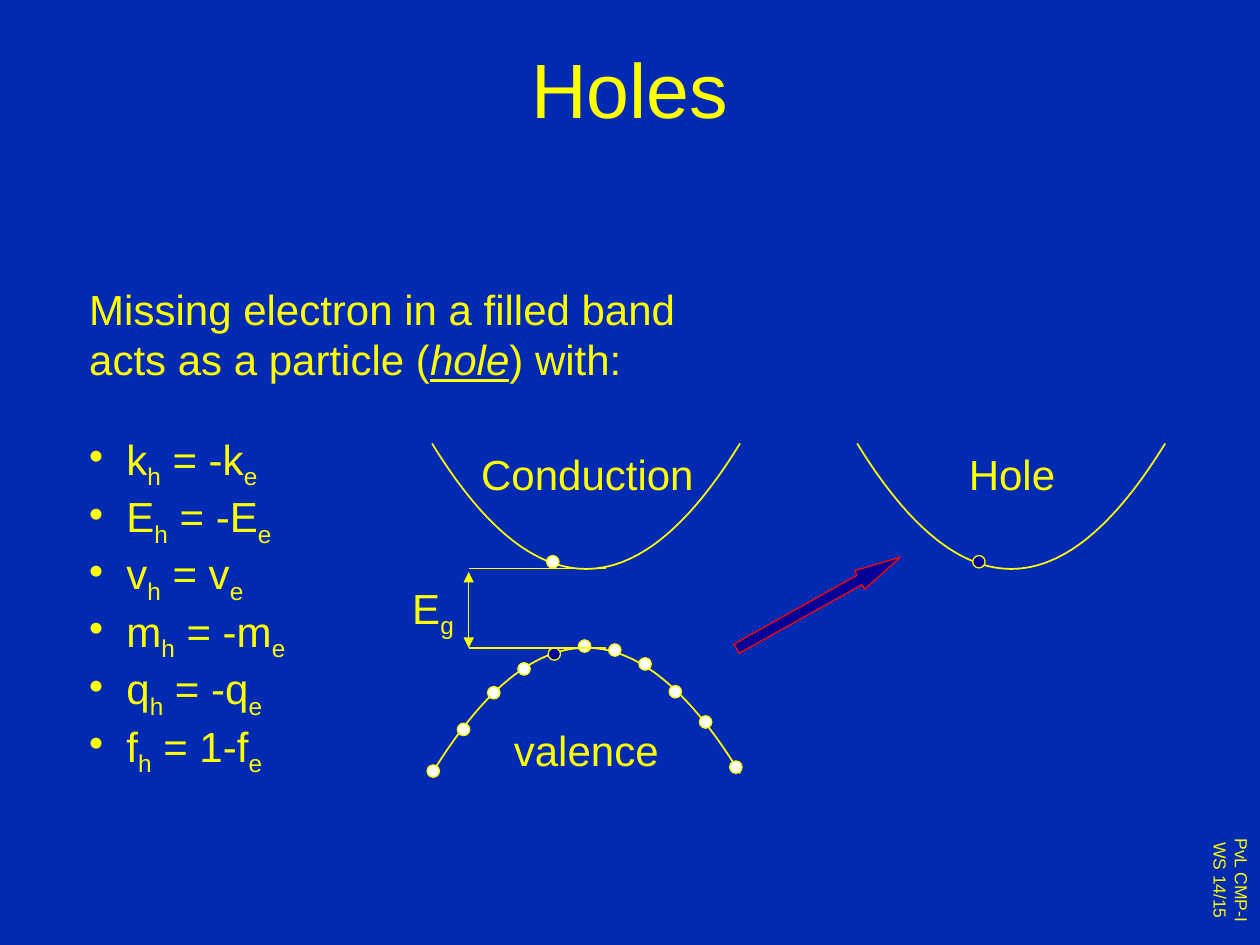
import pptx
import pptx.dml.color
import pptx.enum.shapes
import pptx.enum.text
import pptx.oxml
import pptx.oxml.ns
import pptx.util

Cm, Pt = pptx.util.Cm, pptx.util.Pt
SHAPES = pptx.enum.shapes.MSO_SHAPE
ALIGN = pptx.enum.text.PP_ALIGN
YELLOW, WHITE, NAVY, RED, BLUE = "FFFF00", "FFFFFF", "000099", "FF0000", "002AB2"


def paint(target, color):
    """Give a fill, line or font format a solid hex colour."""
    fill = target if hasattr(target, "solid") else target.fill
    fill.solid()
    fill.fore_color.rgb = pptx.dml.color.RGBColor.from_string(color)


def add_text(left, top, width, height, paragraphs, size=24, align=ALIGN.LEFT):
    """Add a text box; in a tuple paragraph every second piece is a subscript."""
    box = slide.shapes.add_textbox(Cm(left), Cm(top), Cm(width), Cm(height))
    frame = box.text_frame
    frame.word_wrap = False
    for number, pieces in enumerate(paragraphs):
        para = frame.add_paragraph() if number else frame.paragraphs[0]
        para.alignment = align
        for position, piece in enumerate(pieces):
            span = para.add_run()
            span.text = piece
            span.font.name = "Arial"
            span.font.size = Pt(size)
            paint(span.font, YELLOW)
            if position % 2:
                span.font._element.set("baseline", "-25000")
    return box


deck = pptx.Presentation()
deck.slide_width, deck.slide_height = Cm(25.4), Cm(19.05)
slide = deck.slides.add_slide(deck.slide_layouts[6])
paint(slide.background.fill, BLUE)

# Course note, title and statement
note = add_text(24, 16.76, 1.37, 1.98, [("PvL CMP-I",), ("WS 14/15",)], 10, ALIGN.CENTER)
note.text_frame._txBody.bodyPr.set("vert", "vert")
title = add_text(1.9, 0.18, 21.59, 3.18, [("Holes",)], 44, ALIGN.CENTER)
title.text_frame.word_wrap = True
title.text_frame.vertical_anchor = pptx.enum.text.MSO_ANCHOR.MIDDLE

relations = [
    ("k", "h", " = -k", "e"),
    ("E", "h", " = -E", "e"),
    ("v", "h", " = v", "e"),
    ("m", "h", " = -m", "e"),
    ("q", "h", " = -q", "e"),
    ("f", "h", " = 1-f", "e"),
]
statement = [("Missing electron in a filled band",), ("acts as a particle (", "hole", ") with:")]
body = add_text(1.55, 5.59, 12.57, 9.37, statement + relations)
body_paragraphs = body.text_frame.paragraphs
term = body_paragraphs[1].runs[1].font
term._element.attrib.pop("baseline")
term.italic = term.underline = True
body_paragraphs[2].space_before = Pt(28)
for para in body_paragraphs[2:]:
    properties = para._p.get_or_add_pPr()
    properties.set("marL", str(Cm(0.75)))
    properties.set("indent", str(-Cm(0.75)))
    bullet = pptx.oxml.parse_xml(f'<a:buChar {pptx.oxml.ns.nsdecls("a")} char="•"/>')
    properties.append(bullet)

# Parabolic bands: left edge, height of the vertex, height of the ends
band_width, steps = 6.21, 100
for left, vertex, ends in [(8.71, 11.47, 8.94), (8.71, 13.06, 15.59), (17.28, 11.47, 8.94)]:
    points = []
    for step in range(steps + 1):
        offset = 2 * step / steps - 1
        x = left + band_width * step / steps
        points.append((Cm(x), Cm(vertex + (ends - vertex) * offset**2)))
    builder = slide.shapes.build_freeform(*points[0])
    builder.add_line_segments(points[1:], close=False)
    band = builder.convert_to_shape()
    band.shadow.inherit = False
    band.fill.background()
    paint(band.line, YELLOW)
    band.line.width = Pt(1)

# Electrons are white, holes are navy
valence_tops = [15.42, 14.58, 13.84, 13.36, 13.06, 12.9, 12.98, 13.26, 13.82, 14.43, 15.34]
particles = [
    (8.61 + 0.61 * index, top, NAVY if index == 4 else WHITE)
    for index, top in enumerate(valence_tops)
]
particles += [(11.02, 11.2, WHITE), (19.61, 11.2, NAVY)]
for left, top, color in particles:
    particle = slide.shapes.add_shape(SHAPES.OVAL, Cm(left), Cm(top), Cm(0.25), Cm(0.25))
    particle.shadow.inherit = False
    paint(particle.fill, color)
    paint(particle.line, YELLOW)
    particle.line.width = Pt(0.75)

# Band names
add_text(10.11, 14.48, 3.43, 1.27, [("valence",)])
add_text(9.45, 8.92, 4.8, 1.27, [("Conduction",)])
add_text(19.28, 8.92, 2.26, 1.27, [("Hole",)])

arrow = slide.shapes.add_shape(SHAPES.RIGHT_ARROW, Cm(14.61), Cm(11.94), Cm(3.78), Cm(0.43))
arrow.adjustments[0], arrow.adjustments[1] = 0.5, 2.19
arrow.rotation = 330.8
arrow.shadow.inherit = False
paint(arrow.fill, NAVY)
paint(arrow.line, RED)
arrow.line.width = Pt(0.75)

# Energy gap: band edges and the double arrow between them
gap_lines = [
    (9.45, 11.53, 9.45, 13.06, True),
    (12.22, 11.46, 9.45, 11.46, False),
    (12.22, 13.06, 9.45, 13.06, False),
]
for *ends, has_heads in gap_lines:
    line = slide.shapes.add_connector(
        pptx.enum.shapes.MSO_CONNECTOR.STRAIGHT, *[Cm(value) for value in ends]
    )
    paint(line.line, YELLOW)
    line.line.width = Pt(0.75)
    if has_heads:
        for tag in ("headEnd", "tailEnd"):
            head = f'<a:{tag} {pptx.oxml.ns.nsdecls("a")} type="triangle"/>'
            line.line._get_or_add_ln().append(pptx.oxml.parse_xml(head))
    no_effects = pptx.oxml.parse_xml(f'<a:effectLst {pptx.oxml.ns.nsdecls("a")}/>')
    line._element.spPr.append(no_effects)
add_text(8.03, 11.61, 1.4, 1.27, [("E", "g")], align=ALIGN.CENTER)

deck.save("out.pptx")
